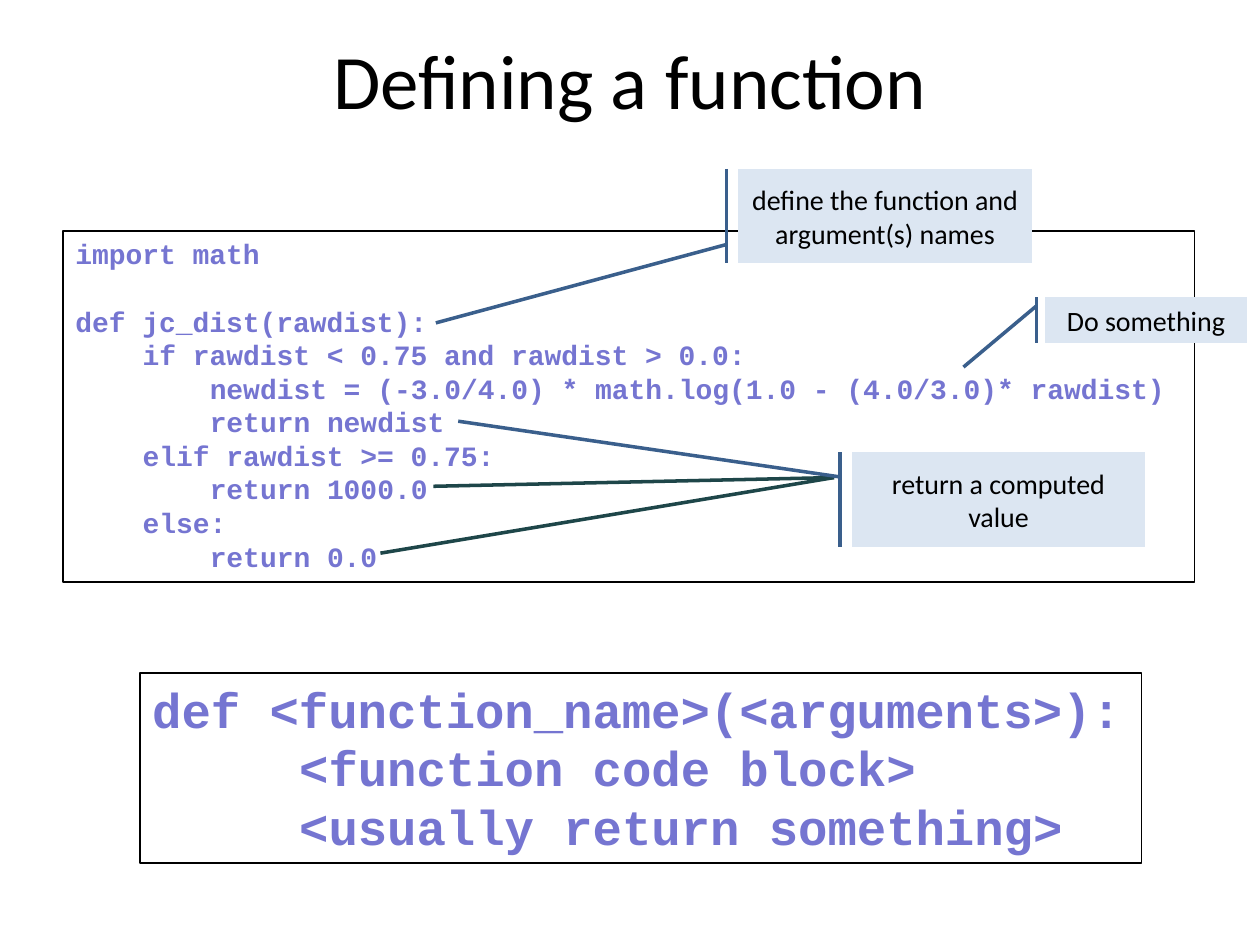
from typing import NamedTuple

from lxml.etree import SubElement
from pptx import Presentation
from pptx.dml.color import RGBColor
from pptx.enum.shapes import MSO_CONNECTOR as Connector, MSO_SHAPE as Preset
from pptx.enum.text import MSO_ANCHOR as Anchor, PP_ALIGN as Align
from pptx.oxml.ns import qn
from pptx.util import Pt

CODE_FONT, CODE_COLOR = "Courier New", "7575D1"
CHARACTER_WIDTH = 0.6  # of the font size, in the code font
LINE_HEIGHT = 1.2  # of the font size


class Box(NamedTuple):
    left: float
    top: float
    width: float
    height: float


class CodeLine(NamedTuple):
    text: str
    indent: int = 0  # in characters
    gap: int = 0  # lines left free above


class CodeBlock(NamedTuple):
    box: Box
    size: float
    lines: list[CodeLine]


class Callout(NamedTuple):
    text: str
    box: Box
    adjustments: tuple[float, float, float, float]


CODE_BLOCKS = [
    CodeBlock(Box(36, 131.8, 646.6, 200.9), 16, [
        CodeLine("import math"),
        CodeLine("def jc_dist(rawdist):", gap=1),
        CodeLine("if rawdist < 0.75 and rawdist > 0.0:", 4),
        CodeLine("newdist = (-3.0/4.0) * math.log(1.0 - (4.0/3.0)* rawdist)", 8),
        CodeLine("return newdist", 8),
        CodeLine("elif rawdist >= 0.75:", 4),
        CodeLine("return 1000.0", 8),
        CodeLine("else:", 4),
        CodeLine("return 0.0", 8),
    ]),
    CodeBlock(Box(79.9, 384.5, 572.4, 108.7), 28, [
        CodeLine("def <function_name>(<arguments>):"),
        CodeLine("<function code block>", 5),
        CodeLine("<usually return something>", 5),
    ]),
]

CALLOUTS = [
    Callout("define the function and argument(s) names",
            Box(421.9, 96.5, 167.8, 54), (0.8, -0.04, 1.63, -1.03)),
    Callout("Do something",
            Box(596.9, 169.9, 115.9, 25.9), (0.19, -0.04, 1.54, -0.4)),
    Callout("return a computed value",
            Box(486.7, 258.5, 167.8, 54), (0.26, -0.04, -0.33, -1.34)),
]

RETURN_STARTS = [(217.4, 316.1), (247.7, 277.9)]
RETURN_END = (476.6, 272.9)


def rgb(color: str) -> RGBColor:
    return RGBColor.from_string(color)


def points(values) -> list:
    return [Pt(value) for value in values]


def write(paragraph, text: str, *, size: float, font: str = "Calibri",
          color: str = "000000", bold: bool = False, align=Align.LEFT,
          indent: float = 0, space_before: float = 0) -> None:
    paragraph.alignment = align
    paragraph.space_before = Pt(space_before)
    if indent:
        paragraph._p.get_or_add_pPr().set("marL", str(Pt(indent)))
    run = paragraph.add_run()
    run.text = text
    run.font.name, run.font.size, run.font.bold = font, Pt(size), bold
    run.font.color.rgb = rgb(color)


def add_panel(slide, preset, box: Box, line: str, width: float, fill: str = ""):
    shape = slide.shapes.add_shape(preset, *points(box))
    shape.shadow.inherit = False
    if fill:
        shape.fill.solid()
        shape.fill.fore_color.rgb = rgb(fill)
    else:
        shape.fill.background()
    shape.line.color.rgb = rgb(line)
    shape.line.width = Pt(width)
    shape.text_frame.word_wrap = True
    return shape


def add_code(slide, block: CodeBlock) -> None:
    frame = add_panel(slide, Preset.RECTANGLE, block.box, "000000", 1).text_frame
    frame.vertical_anchor = Anchor.TOP
    for index, line in enumerate(block.lines):
        paragraph = frame.add_paragraph() if index else frame.paragraphs[0]
        write(paragraph, line.text, size=block.size, font=CODE_FONT,
              color=CODE_COLOR, bold=True,
              indent=line.indent * CHARACTER_WIDTH * block.size,
              space_before=line.gap * LINE_HEIGHT * block.size)


def add_callout(slide, callout: Callout) -> None:
    shape = add_panel(slide, Preset.LINE_CALLOUT_1_ACCENT_BAR, callout.box,
                      "3A5F8C", 2, "DCE6F2")
    for index, value in enumerate(callout.adjustments):
        shape.adjustments[index] = value
    shape.text_frame.vertical_anchor = Anchor.MIDDLE
    write(shape.text_frame.paragraphs[0], callout.text, size=16, align=Align.CENTER)


def add_line(slide, start: tuple[float, float], end: tuple[float, float]) -> None:
    connector = slide.shapes.add_connector(Connector.STRAIGHT, *points(start + end))
    connector.line.color.rgb = rgb("1E4649")
    connector.line.width = Pt(2)
    SubElement(connector._element.spPr, qn("a:effectLst"))


def add_title(slide, text: str) -> None:
    frame = slide.shapes.add_textbox(*points(Box(0, 0, 720, 90))).text_frame
    frame.word_wrap = True
    frame.vertical_anchor = Anchor.MIDDLE
    write(frame.paragraphs[0], text, size=44, align=Align.CENTER)


def main() -> None:
    presentation = Presentation()
    presentation.slide_width, presentation.slide_height = Pt(720), Pt(540)
    slide = presentation.slides.add_slide(presentation.slide_layouts[6])

    # Code and title
    for block in CODE_BLOCKS:
        add_code(slide, block)
    add_title(slide, "Defining a function")

    # Further return statements, under the callouts
    for start in RETURN_STARTS:
        add_line(slide, start, RETURN_END)

    # Explanations
    for callout in CALLOUTS:
        add_callout(slide, callout)

    presentation.save("out.pptx")


if __name__ == "__main__":
    main()
